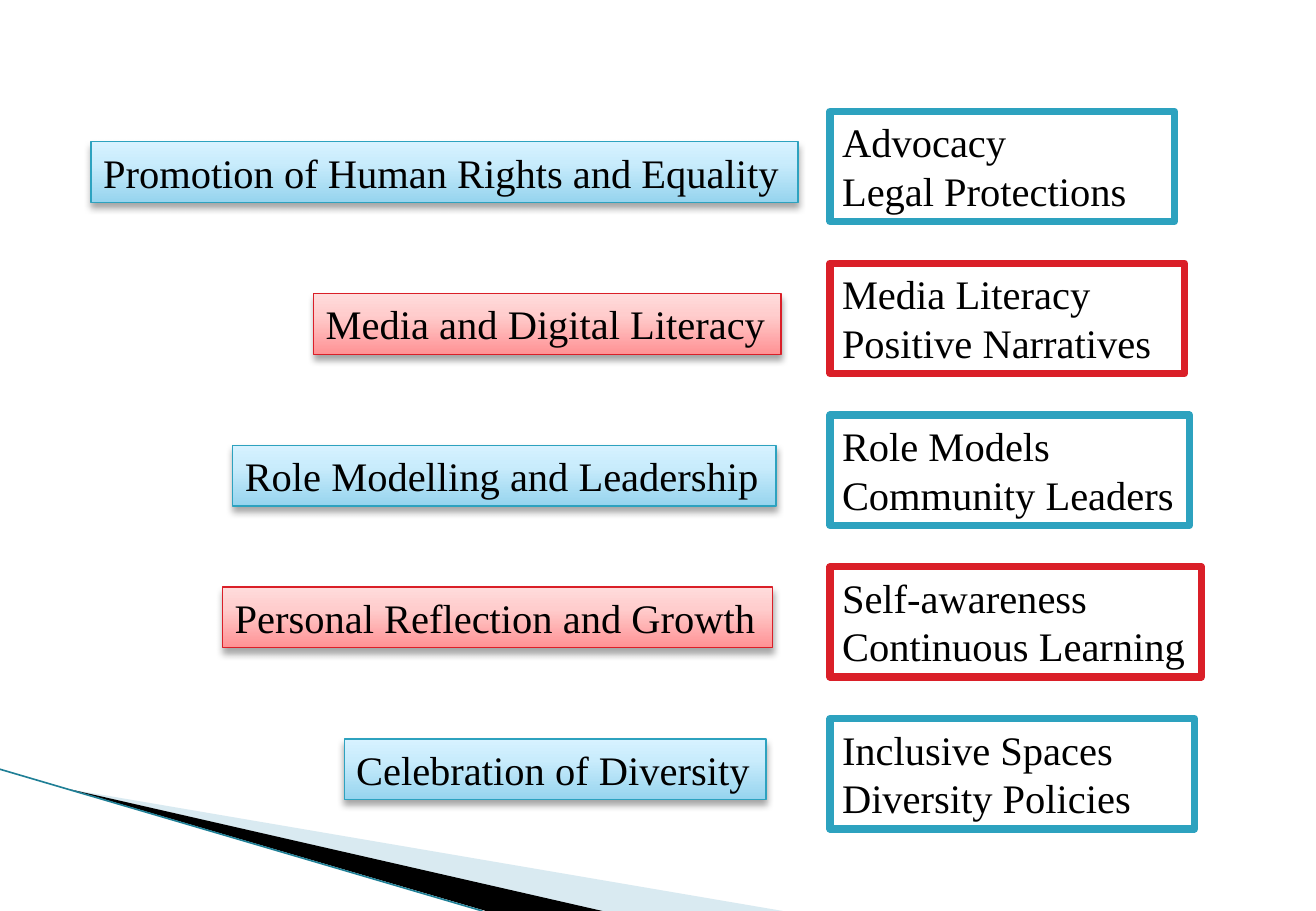
import copy

import pptx
import pptx.dml.color
import pptx.enum.dml
import pptx.enum.shapes
import pptx.enum.text
import pptx.oxml
import pptx.oxml.ns
import pptx.oxml.xmlchemy
import pptx.util

Pt = pptx.util.Pt
RGBColor = pptx.dml.color.RGBColor
OxmlElement = pptx.oxml.xmlchemy.OxmlElement
qn = pptx.oxml.ns.qn

BLACK = RGBColor(0x00, 0x00, 0x00)
WHITE = RGBColor(0xFF, 0xFF, 0xFF)
TEAL = RGBColor(0x2D, 0xA2, 0xBF)
RED = RGBColor(0xDA, 0x1F, 0x28)
PALE_TEAL = RGBColor(0xA0, 0xCB, 0xDC)
DARK_TEAL = RGBColor(0x1F, 0x7F, 0x96)

# Gradient stops run from the bottom of a label to its top.
GRADIENT_POSITIONS = (0, 0.65, 1)
TEAL_GRADIENT = (RGBColor(0x96, 0xD4, 0xEE), RGBColor(0xC9, 0xEC, 0xFC), RGBColor(0xD7, 0xF2, 0xFF))
RED_GRADIENT = (RGBColor(0xFF, 0x92, 0x94), RGBColor(0xFF, 0xCD, 0xCD), RGBColor(0xFF, 0xDC, 0xDC))
THEMES = ((TEAL, TEAL_GRADIENT), (RED, RED_GRADIENT))

SLIDE_WIDTH, SLIDE_HEIGHT = 780, 540
FIRST_ROW_TOP, ROW_PITCH = 66, 90
LABEL_HEIGHT = 36
ACTION_LEFT, ACTION_HEIGHT = 492, 65.4

# Label text, left, width and drop below the row top; action lines and box width.
ROWS = (
    ("Promotion of Human Rights and Equality", 54, 419, 18,
     ("Advocacy", "Legal Protections"), 204),
    ("Media and Digital Literacy", 186, 277, 18,
     ("Media Literacy", "Positive Narratives"), 210),
    ("Role Modelling and Leadership", 138, 322, 18,
     ("Role Models", "Community Leaders"), 213),
    ("Personal Reflection and Growth", 132, 326, 12,
     ("Self-awareness", "Continuous Learning"), 220),
    ("Celebration of Diversity", 204, 250, 12,
     ("Inclusive Spaces", "Diversity Policies"), 216),
)

SHADOW_XML = (
    '<a:outerShdw xmlns:a="http://schemas.openxmlformats.org/drawingml/2006/main" '
    'blurRad="50800" dist="38100" dir="5400000" rotWithShape="0">'
    '<a:srgbClr val="000000"><a:alpha val="35000"/></a:srgbClr></a:outerShdw>'
)


def write_text(shape, lines, size=24, font="Times New Roman", color=BLACK):
    frame = shape.text_frame
    frame.text = "\n".join(lines)
    frame.word_wrap = True
    frame.auto_size = pptx.enum.text.MSO_AUTO_SIZE.SHAPE_TO_FIT_TEXT
    frame.vertical_anchor = pptx.enum.text.MSO_ANCHOR.TOP
    for paragraph in frame.paragraphs:
        paragraph.alignment = pptx.enum.text.PP_ALIGN.LEFT
        paragraph.font.size = Pt(size)
        paragraph.font.name = font
        paragraph.font.color.rgb = color


def add_box(slide, left, top, width, height, line_color, line_width):
    shape = slide.shapes.add_shape(
        pptx.enum.shapes.MSO_SHAPE.RECTANGLE, Pt(left), Pt(top), Pt(width), Pt(height))
    shape.shadow.inherit = False
    shape.line.color.rgb = line_color
    shape.line.width = Pt(line_width)
    return shape


def fill_gradient(shape, colors):
    """Fill with three stops, rising from the bottom edge."""
    fill = shape.fill
    fill.gradient()
    fill.gradient_angle = 90
    stop_list = shape._element.spPr.find(qn("a:gradFill")).find(qn("a:gsLst"))
    stop_list.append(copy.deepcopy(stop_list[-1]))
    for stop, position, color in zip(fill.gradient_stops, GRADIENT_POSITIONS, colors):
        stop.position = position
        stop.color.rgb = color


def add_label(slide, text, left, top, width, line_color, gradient):
    label = add_box(slide, left, top, width, LABEL_HEIGHT, line_color, 0.75)
    fill_gradient(label, gradient)
    effects = label._element.spPr.find(qn("a:effectLst"))
    effects.append(pptx.oxml.parse_xml(SHADOW_XML))
    write_text(label, [text])


def add_action_box(slide, lines, top, width, line_color):
    box = add_box(slide, ACTION_LEFT, top, width, ACTION_HEIGHT, line_color, 4.33)
    box.fill.solid()
    box.fill.fore_color.rgb = WHITE
    write_text(box, lines)


def add_wedge(slide, points, color, opacity=100):
    start, *others = [(Pt(x), Pt(y)) for x, y in points]
    builder = slide.shapes.build_freeform(*start)
    builder.add_line_segments(others, close=True)
    wedge = builder.convert_to_shape()
    wedge.shadow.inherit = False
    wedge.line.fill.background()
    wedge.fill.solid()
    wedge.fill.fore_color.rgb = color
    if opacity < 100:
        color_element = wedge._element.spPr.find(qn("a:solidFill"))[0]
        alpha = OxmlElement("a:alpha")
        alpha.set("val", str(opacity * 1000))
        color_element.append(alpha)


def add_edge_line(slide, start, end, color, width):
    line = slide.shapes.add_connector(
        pptx.enum.shapes.MSO_CONNECTOR.STRAIGHT, *map(Pt, start + end))
    line.line.color.rgb = color
    line.line.width = Pt(width)
    line._element.spPr.append(OxmlElement("a:effectLst"))


def add_corner_decoration(slide):
    add_wedge(slide, [(42, 468), (464, SLIDE_HEIGHT), (355, SLIDE_HEIGHT)], PALE_TEAL, opacity=40)
    add_wedge(slide, [(42, 468), (357, SLIDE_HEIGHT), (288, SLIDE_HEIGHT)], BLACK)
    add_edge_line(slide, (0, 456), (286, SLIDE_HEIGHT), DARK_TEAL, 0.95)


def main():
    presentation = pptx.Presentation()
    presentation.slide_width = Pt(SLIDE_WIDTH)
    presentation.slide_height = Pt(SLIDE_HEIGHT)
    slide = presentation.slides.add_slide(presentation.slide_layouts[6])

    add_corner_decoration(slide)
    for index, (text, left, label_width, drop, lines, action_width) in enumerate(ROWS):
        top = FIRST_ROW_TOP + index * ROW_PITCH
        line_color, gradient = THEMES[index % len(THEMES)]
        add_label(slide, text, left, top + drop, label_width, line_color, gradient)
        add_action_box(slide, lines, top, action_width, line_color)

    presentation.save("out.pptx")


if __name__ == "__main__":
    main()
